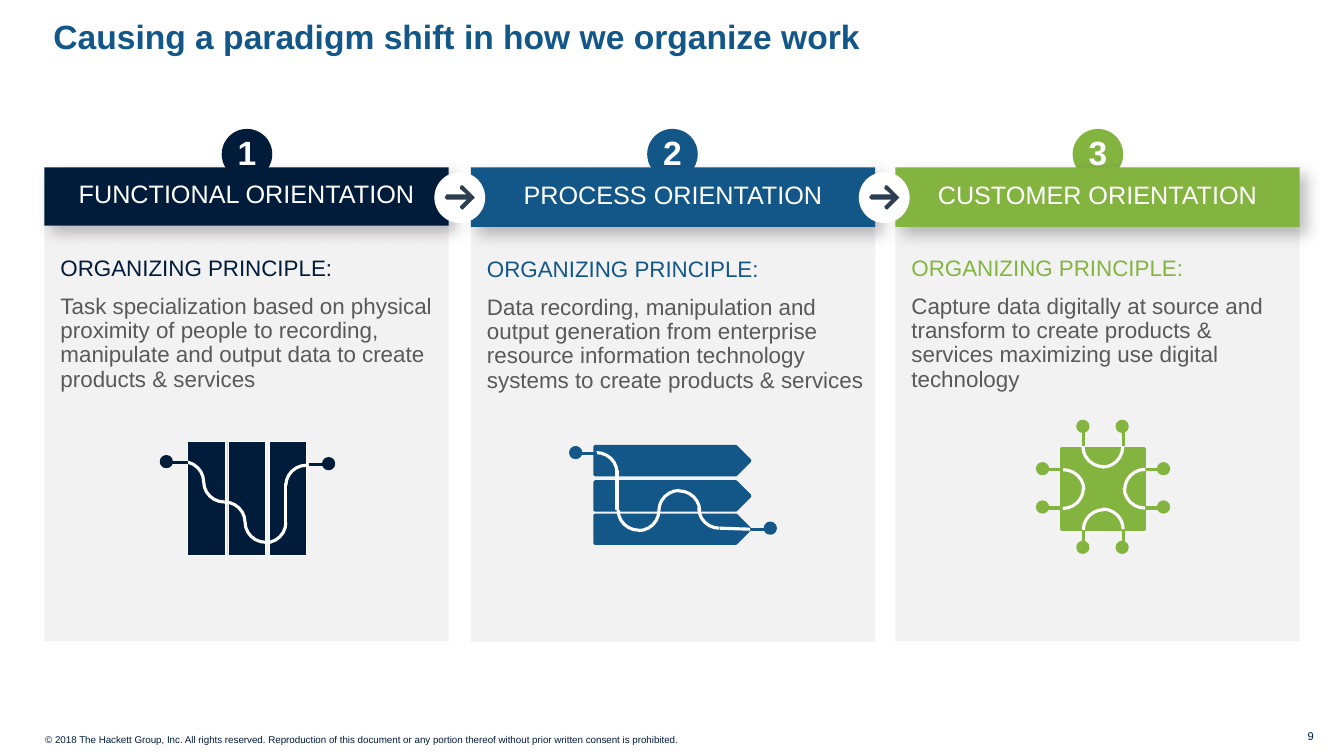
import pptx
import pptx.util
import pptx.dml.color
import pptx.enum.shapes
import pptx.enum.text
import pptx.oxml
import pptx.oxml.ns

Inches = pptx.util.Inches
Pt = pptx.util.Pt
KIND = pptx.enum.shapes.MSO_SHAPE
ALIGN = pptx.enum.text.PP_ALIGN
MIDDLE = pptx.enum.text.MSO_ANCHOR.MIDDLE
NAVY, BLUE, GREEN = "001C3A", "135789", "84B440"
WHITE, GREY, PALE, SLATE = "FFFFFF", "595959", "F2F2F2", "2C3E50"
STROKE = 2.25
COLUMNS = [
    (0.44, 0.58, NAVY, "FUNCTIONAL ORIENTATION",
     "Task specialization based on physical proximity of people to recording, "
     "manipulate and output data to create products & services"),
    (4.67, 0.59, BLUE, "PROCESS ORIENTATION",
     "Data recording, manipulation and output generation from enterprise "
     "resource information technology systems to create products & services"),
    (8.88, 0.58, GREEN, "CUSTOMER ORIENTATION",
     "Capture data digitally at source and transform to create products & "
     "services maximizing use digital technology"),
]
ARROW = [(0.18, 0.25), (0.3, 0.13), (0.18, 0.01), (0.16, 0.01), (0.15, 0.04),
         (0.22, 0.1), (0.02, 0.1), (0, 0.13), (0.02, 0.15), (0.22, 0.15),
         (0.15, 0.22), (0.16, 0.24)]


def tint(code):
    return pptx.dml.color.RGBColor.from_string(code)


def paint(item, fill, line=None, width=STROKE):
    item.shadow.inherit = False
    if fill:
        item.fill.solid()
        item.fill.fore_color.rgb = tint(fill)
    else:
        item.fill.background()
    if line:
        item.line.color.rgb = tint(line)
        item.line.width = Pt(width)
    else:
        item.line.fill.background()


def shape(slide, kind, x, y, w, h, fill, line=None, width=STROKE):
    item = slide.shapes.add_shape(kind, Inches(x), Inches(y), Inches(w), Inches(h))
    paint(item, fill, line, width)
    return item


def write(item, rows, pad, align=ALIGN.LEFT, bold=False, space=1, after=0, wrap=True):
    frame = item.text_frame
    frame.word_wrap = wrap
    (frame.margin_left, frame.margin_top,
     frame.margin_right, frame.margin_bottom) = map(Inches, pad)
    for place, (text, size, color) in enumerate(rows):
        para = frame.add_paragraph() if place else frame.paragraphs[0]
        para.text = text
        para.alignment = align
        para.line_spacing = space
        para.space_after = Pt(after)
        para.font.name = "Arial"
        para.font.size = Pt(size)
        para.font.bold = bold
        para.font.color.rgb = tint(color)
    return frame


def label(slide, x, y, w, h, row, pad=(0.1, 0.05, 0.1, 0.05), **style):
    box = slide.shapes.add_textbox(Inches(x), Inches(y), Inches(w), Inches(h))
    write(box, [row], pad, **style)


def shade(item):
    names = pptx.oxml.ns.nsdecls("a")
    item._element.spPr.remove(item._element.spPr.find(pptx.oxml.ns.qn("a:effectLst")))
    item._element.spPr.append(pptx.oxml.parse_xml(
        f'<a:effectLst {names}><a:outerShdw blurRad="{Pt(11)}" dist="{Pt(7)}" '
        'dir="2700000" algn="tl" rotWithShape="0"><a:srgbClr val="000000">'
        '<a:alpha val="25000"/></a:srgbClr></a:outerShdw></a:effectLst>'))


def line(slide, x, y, end, top, color):
    item = slide.shapes.add_connector(
        pptx.enum.shapes.MSO_CONNECTOR.STRAIGHT,
        Inches(x), Inches(y), Inches(end), Inches(top))
    item.line.color.rgb = tint(color)
    item.line.width = Pt(STROKE)
    item._element.spPr.append(pptx.oxml.parse_xml(
        f'<a:effectLst {pptx.oxml.ns.nsdecls("a")}/>'))


def arc(slide, x, y, turn):
    w, h = (0.4, 0.41) if turn % 180 else (0.41, 0.4)
    shape(slide, KIND.ARC, x, y, w, h, None, WHITE).rotation = turn


def pin(slide, x, y, across, down, color, reach=0.18):
    shape(slide, KIND.OVAL, x + across * reach - 0.06, y + down * reach - 0.06,
          0.1, 0.1, color, color)
    stem = reach - 0.02
    line(slide, x, y, x + across * stem, y + down * stem, color)


def panel(slide, place, x, high, color, head, body):
    ball = shape(slide, KIND.OVAL, 2.22 + 4.22 * place, 1.3, 0.46, 0.46, color, color, 3)
    frame = write(ball, [(str(place + 1), 24, WHITE)], (0.1, 0, 0.1, 0.05),
                  ALIGN.CENTER, bold=True, wrap=False)
    frame.vertical_anchor = MIDDLE
    card = shape(slide, KIND.RECTANGLE, x, 1.66 + high, 4.01, 4.12, PALE)
    frame = write(card, [("ORGANIZING PRINCIPLE:", 16, color), (body, 16, GREY)],
                  (0.16, 0.31, 0.04, 0.04), space=0.9, after=10)
    frame.vertical_anchor = pptx.enum.text.MSO_ANCHOR.TOP
    band = shape(slide, KIND.RECTANGLE, x, 1.66, 4.01, 0.59 if place else 0.58, color)
    shade(band)
    frame = write(band, [(head, 18, WHITE)], (0.04,) * 4, ALIGN.CENTER,
                  space=0.8, after=10)
    frame.vertical_anchor = MIDDLE


def arrow(slide, x):
    shape(slide, KIND.OVAL, x, 1.72, 0.48, 0.48, WHITE, WHITE, 1.75)
    spots = [(Inches(x + 0.09 + a), Inches(1.83 + b)) for a, b in ARROW]
    path = slide.shapes.build_freeform(*spots[0])
    path.add_line_segments(spots[1:], close=True)
    paint(path.convert_to_shape(), SLATE)


def silos(slide):
    for x in (1.86, 2.26, 2.67):
        shape(slide, KIND.RECTANGLE, x, 4.38, 0.37, 1.13, NAVY, WHITE, 0.25)
    for x, y, turn in [(1.61, 4.58, 0), (2.02, 4.58, 180), (2.02, 4.98, 0),
                       (2.43, 4.98, 180), (2.43, 4.98, 90), (2.84, 4.61, 270)]:
        arc(slide, x, y, turn)
    line(slide, 2.83, 4.79, 2.83, 5.19, WHITE)
    pin(slide, 3.06, 4.61, 1, 0, NAVY, 0.21)
    pin(slide, 1.86, 4.59, -1, 0, NAVY, 0.2)


def flows(slide):
    for y in (4.43, 4.78, 5.11):
        shape(slide, KIND.PENTAGON, 5.9, y, 1.54, 0.28, BLUE, BLUE)
    for x, y, turn in [(5.71, 4.49, 0), (6.13, 4.86, 180), (6.13, 4.86, 90),
                       (6.54, 4.86, 270), (6.53, 4.87, 0), (6.93, 4.84, 180)]:
        arc(slide, x, y, turn)
    line(slide, 6.12, 4.66, 6.12, 5.06, WHITE)
    pin(slide, 7.43, 5.25, 1, 0, BLUE, 0.22)
    line(slide, 7.44, 5.25, 7.14, 5.24, WHITE)
    pin(slide, 5.92, 4.5, -1, 0, BLUE, 0.2)


def hub(slide):
    shape(slide, KIND.RECTANGLE, 10.53, 4.45, 0.82, 0.8, GREEN, GREEN)
    for y in (4.66, 5.04):
        pin(slide, 10.53, y, -1, 0, GREEN)
        pin(slide, 11.37, y, 1, 0, GREEN)
    for x in (10.75, 11.14):
        pin(slide, x, 4.42, 0, -1, GREEN)
        pin(slide, x, 5.26, 0, 1, GREEN)
    for x, y, turn in [(11.15, 4.64, 180), (11.16, 4.65, 270),
                       (10.73, 4.23, 90), (10.74, 4.23, 180),
                       (10.75, 5.05, 270), (10.73, 5.05, 0),
                       (10.34, 4.66, 0), (10.34, 4.64, 90)]:
        arc(slide, x, y, turn)


def main():
    deck = pptx.Presentation()
    deck.slide_width = Inches(13.33)
    deck.slide_height = Inches(7.5)
    slide = deck.slides.add_slide(deck.slide_layouts[6])
    label(slide, 8.59, 7.19, 4.54, 0.24, ("9", 8, NAVY), align=ALIGN.RIGHT)
    label(slide, 0.35, 7.23, 10.03, 0.22,
          ("© 2018 The Hackett Group, Inc. All rights reserved. Reproduction of this "
           "document or any portion thereof without prior written consent is "
           "prohibited.", 7, NAVY))
    label(slide, 0.45, 0.16, 12.43, 0.94,
          ("Causing a paradigm shift in how we organize work", 24, BLUE),
          (0.08, 0.04, 0.08, 0.04), bold=True, space=0.9)
    for place, column in enumerate(COLUMNS):
        panel(slide, place, *column)
    for x in (4.32, 8.53):
        arrow(slide, x)
    silos(slide)
    flows(slide)
    hub(slide)
    deck.save("out.pptx")


if __name__ == "__main__":
    main()
